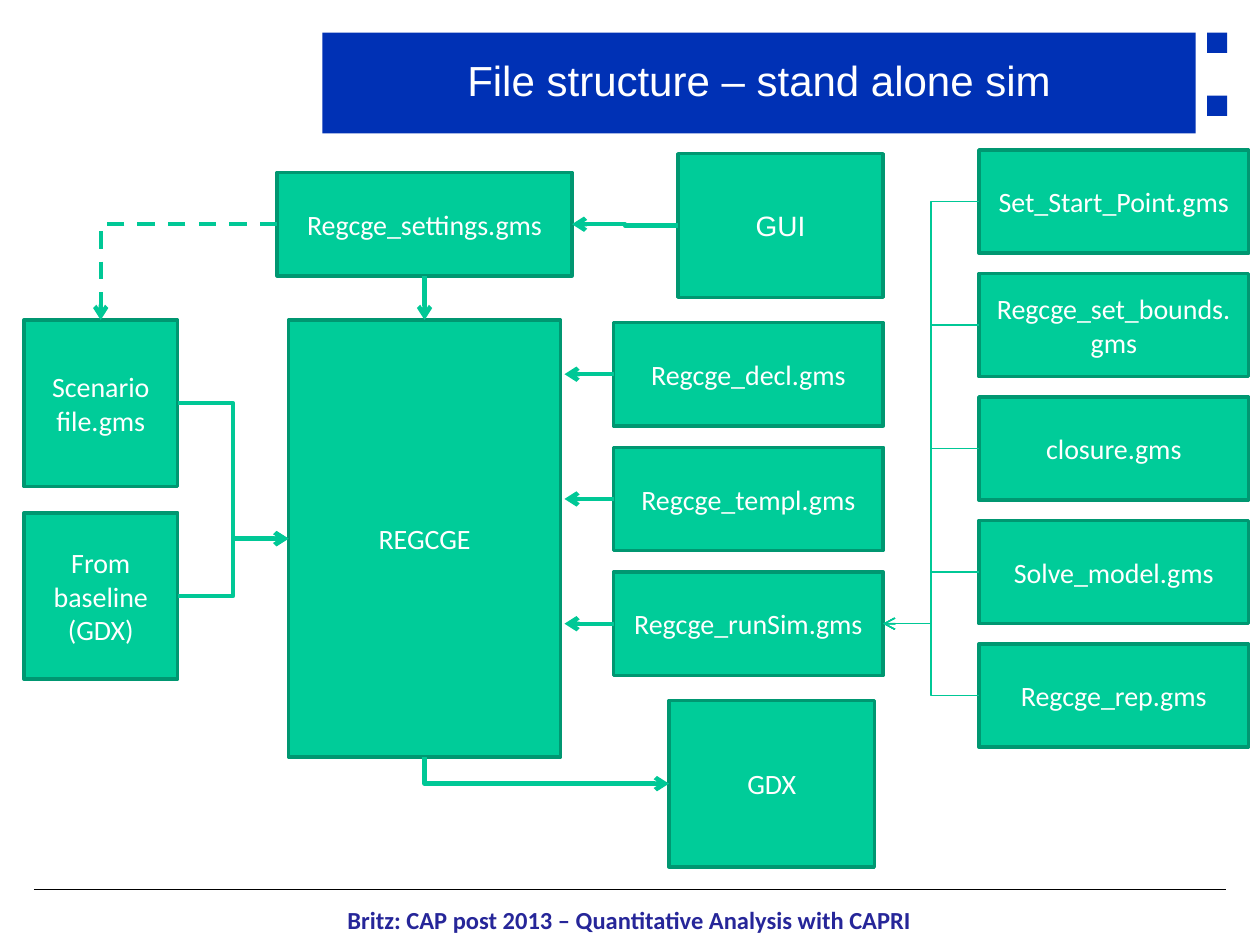
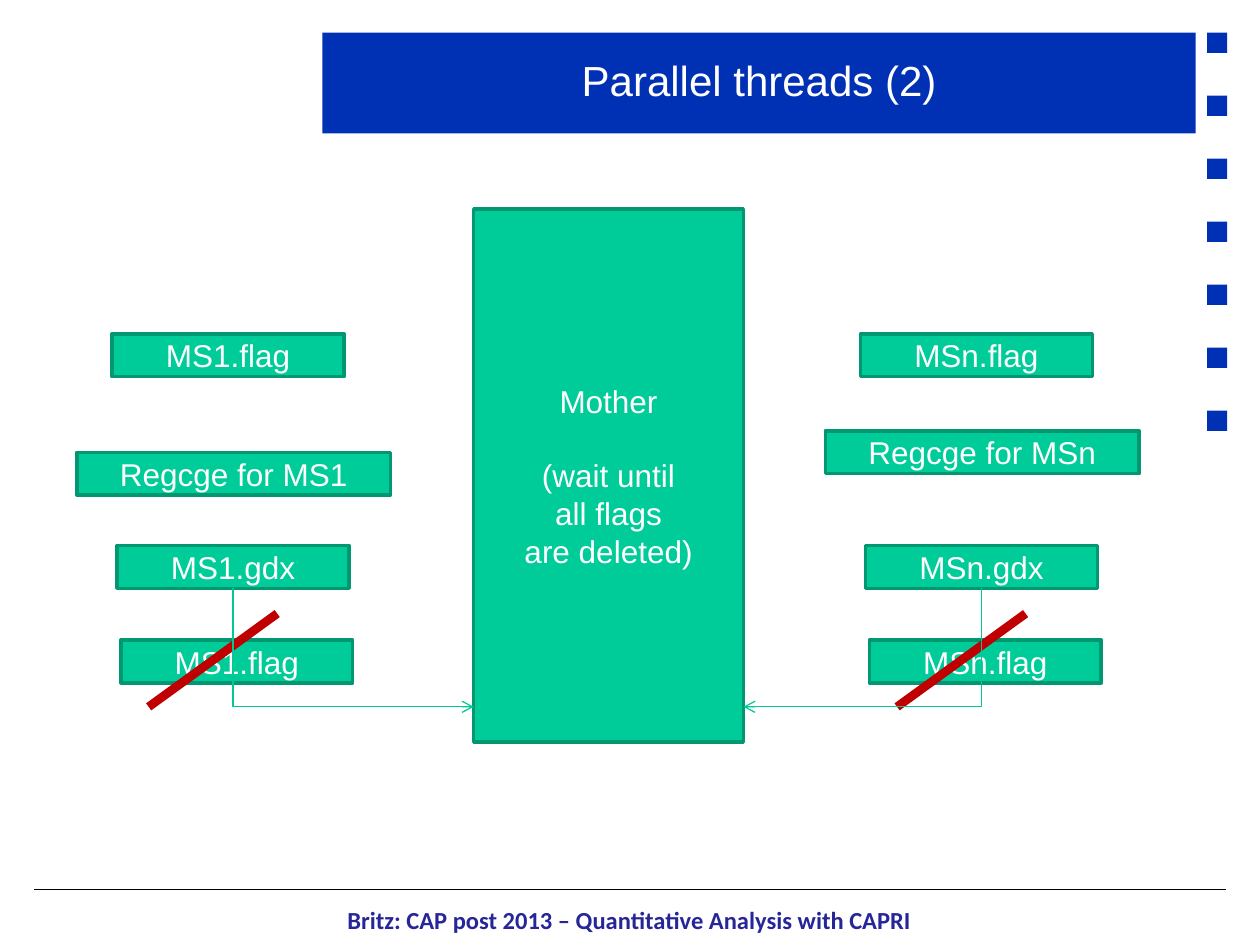
from dataclasses import dataclass

from lxml import etree
from pptx import Presentation
from pptx.dml.color import RGBColor
from pptx.enum import dml, shapes, text
from pptx.oxml.ns import qn
from pptx.util import Inches, Pt


@dataclass(frozen=True)
class Theme:
    band: str = "0031B5"
    box: str = "00CC99"
    edge: str = "009771"
    arrow: str = "00C896"
    strike: str = "C00000"
    rule: str = "000000"
    footer: str = "262699"
    white: str = "FFFFFF"
    title_size: int = 24
    footer_size: int = 14
    file_size: int = 16
    thread_size: int = 18
    edge_width: float = 2
    thick: float = 2.5
    thin: float = 0.75
    strike_width: float = 5
    heading_font: str = "Arial"
    file_font: str = "Calibri"


T = Theme()
TOP, LEFT, BOTTOM, RIGHT = range(4)  # connection sites of a rectangle

# ---- Content shared by the slides ----
FOOTER = "Britz: CAP post 2013 – Quantitative Analysis with CAPRI"
SQUARE, SQUARE_X, SQUARE_Y, SQUARE_PITCH = 0.16, 9.58, 0.26, 0.5

# ---- Content of the file structure slide ----
FILE_TITLE = "File structure – stand alone sim"
SINGLE_FILES = {  # name: (left, top, width, height)
    "REGCGE": (2.29, 2.54, 2.16, 3.47),
    "GUI": (5.38, 1.22, 1.63, 1.14),
    "GDX": (5.31, 5.56, 1.63, 1.32),
    "Regcge_settings.gms": (2.2, 1.37, 2.34, 0.82),
}
SCENARIO, BASELINE = "Scenario\nfile.gms", "From\nbaseline\n(GDX)"
INPUTS = [SCENARIO, BASELINE]
MODULES = ["Regcge_decl.gms", "Regcge_templ.gms", "Regcge_runSim.gms"]
INCLUDES = ["Set_Start_Point.gms", "Regcge_set_bounds.gms", "closure.gms",
            "Solve_model.gms", "Regcge_rep.gms"]
STACKS = [  # names, left, top, width, height, pitch
    (INPUTS, 0.19, 2.54, 1.22, 1.32, 1.53),
    (MODULES, 4.87, 2.56, 2.14, 0.82, 0.99),
    (INCLUDES, 7.77, 1.19, 2.14, 0.82, 0.98),
]

# ---- Content of the parallel threads slide ----
THREAD_TITLE = "Parallel threads (2)"
MOTHER = "Mother\n(wait until\nall flags\nare deleted)"
MOTHER_AT = (3.76, 1.66, 2.14, 4.23)
THREADS = [  # thread, shift to the right, top of its model run
    ("MS1", 0, 3.59),
    ("MSn", 5.94, 3.42),
]
FLAG_W, RUN_W, ROW_H = 1.84, 2.49, 0.34
RETURN_Y = 5.61


# ---- Drawing helpers ----
def rgb(value):
    return RGBColor.from_string(value)


def write(sp, words, size, font, color, bold=False):
    tf = sp.text_frame
    tf.word_wrap = True
    tf.vertical_anchor = text.MSO_ANCHOR.MIDDLE
    tf.text = words
    for p in tf.paragraphs:
        p.alignment = text.PP_ALIGN.CENTER
        for r in p.runs:
            r.font.size, r.font.name, r.font.bold = Pt(size), font, bold
            r.font.color.rgb = rgb(color)
    return tf


def add_rect(s, at, fill, edge=None):
    sp = s.shapes.add_shape(shapes.MSO_SHAPE.RECTANGLE, *map(Inches, at))
    sp.shadow.inherit = False
    sp.fill.solid()
    sp.fill.fore_color.rgb = rgb(fill)
    if edge:
        sp.line.color.rgb = rgb(edge)
        sp.line.width = Pt(T.edge_width)
    else:
        sp.line.fill.background()
    return sp


def add_box(s, at, words, size, font):
    sp = add_rect(s, at, T.box, T.edge)
    write(sp, words, size, font, T.white)
    return sp


def add_line(s, start, end, color, width, kind="STRAIGHT", arrow=None):
    """Each end is a point in inches or a (shape, site) pair; arrow is headEnd or tailEnd."""
    glued = [isinstance(e[0], (int, float)) is False for e in (start, end)]
    points = [(0, 0) if g else e for g, e in zip(glued, (start, end))]
    line = s.shapes.add_connector(getattr(shapes.MSO_CONNECTOR, kind),
                                  *[Inches(v) for point in points for v in point])
    if glued[0]:
        line.begin_connect(*start)
    if glued[1]:
        line.end_connect(*end)
    line.line.color.rgb = rgb(color)
    line.line.width = Pt(width)
    if arrow:
        etree.SubElement(line.line._get_or_add_ln(), qn("a:" + arrow), type="arrow")
    etree.SubElement(line._element.spPr, qn("a:effectLst"))
    return line


def add_corner(s, start, end, width, arrow):
    """One bend: leaves start sideways and reaches end vertically."""
    line = add_line(s, start, end, T.arrow, width, "ELBOW", arrow)
    line._element.spPr.find(qn("a:prstGeom")).set("prst", "bentConnector2")
    return line


def add_slide(prs, title, squares):
    s = prs.slides.add_slide(prs.slide_layouts[6])
    add_line(s, (0.27, 7.06), (9.73, 7.06), T.rule, T.thin)
    for i in range(squares):
        add_rect(s, (SQUARE_X, SQUARE_Y + i * SQUARE_PITCH, SQUARE, SQUARE), T.band)
    band = add_rect(s, (2.56, 0.26, 6.93, 0.8), T.band)
    tf = write(band, title, T.title_size, T.heading_font, T.white)
    tf.paragraphs[0].line_spacing = 0.9
    note = s.shapes.add_textbox(*map(Inches, (0.27, 7.14, 9.45, 0.24)))
    tf = write(note, FOOTER, T.footer_size, T.file_font, T.footer, bold=True)
    tf.margin_left = tf.margin_right = tf.margin_bottom = 0
    tf.margin_top = Inches(0.08)
    return s


# ---- Slides ----
def file_structure(prs):
    s = add_slide(prs, FILE_TITLE, 2)
    places = dict(SINGLE_FILES)
    for names, left, top, width, height, pitch in STACKS:
        for row, name in enumerate(names):
            places[name] = (left, top + row * pitch, width, height)
    box = {name: add_box(s, at, name, T.file_size,
                         T.heading_font if name == "GUI" else T.file_font)
           for name, at in places.items()}
    core, settings = box["REGCGE"], box["Regcge_settings.gms"]

    # Settings come from the GUI and select the scenario
    add_line(s, (box["GUI"], LEFT), (settings, RIGHT), T.arrow, T.thick, "ELBOW", "tailEnd")
    add_line(s, (settings, BOTTOM), (core, TOP), T.arrow, T.thick, arrow="tailEnd")
    dashed = add_corner(s, (settings, LEFT), (box[SCENARIO], TOP), T.thick, "tailEnd")
    dashed.line.dash_style = dml.MSO_LINE.DASH

    # Inputs and modules feed the core, which writes the result
    for name in INPUTS:
        add_line(s, (box[name], RIGHT), (core, LEFT), T.arrow, T.thick, "ELBOW", "tailEnd")
    for name in MODULES:
        left, top, _, height = places[name]
        y = top + height / 2
        add_line(s, (left, y), (left - 0.39, y), T.arrow, T.thick, arrow="tailEnd")
    add_corner(s, (box["GDX"], LEFT), (core, BOTTOM), T.thick, "headEnd")

    # Files included by the simulation run
    for name in INCLUDES:
        add_line(s, (box[name], LEFT), (box[MODULES[-1]], RIGHT), T.arrow, T.thin,
                 "ELBOW", "tailEnd")


def parallel_threads(prs):
    s = add_slide(prs, THREAD_TITLE, 7)
    mother = add_box(s, MOTHER_AT, MOTHER, T.thread_size, T.heading_font)
    mother.text_frame.paragraphs[0].space_after = Pt(21)
    for thread, shift, run_y in THREADS:
        steps = [  # label, left, top, width
            (f"{thread}.flag", 0.89, 2.65, FLAG_W),
            (f"Regcge for {thread}", 0.61, run_y, RUN_W),
            (f"{thread}.flag", 0.96, 5.08, FLAG_W),
            (f"{thread}.gdx", 0.93, 4.33, FLAG_W),
        ]
        for label, left, top, width in steps:
            result = add_box(s, (left + shift, top, width, ROW_H), label,
                             T.thread_size, T.heading_font)
        # The flag is struck out once the result is handed to the mother
        strike_x = 1.18 + shift
        add_line(s, (strike_x, RETURN_Y), (strike_x + 1.02, 4.87), T.strike, T.strike_width)
        left, _, width, _ = MOTHER_AT
        side = left + width if shift else left
        add_corner(s, (side, RETURN_Y), (result, BOTTOM), T.thin, "headEnd")


def main():
    prs = Presentation()
    prs.slide_width, prs.slide_height = Inches(10), Inches(7.5)
    file_structure(prs)
    parallel_threads(prs)
    prs.save("out.pptx")


if __name__ == "__main__":
    main()
